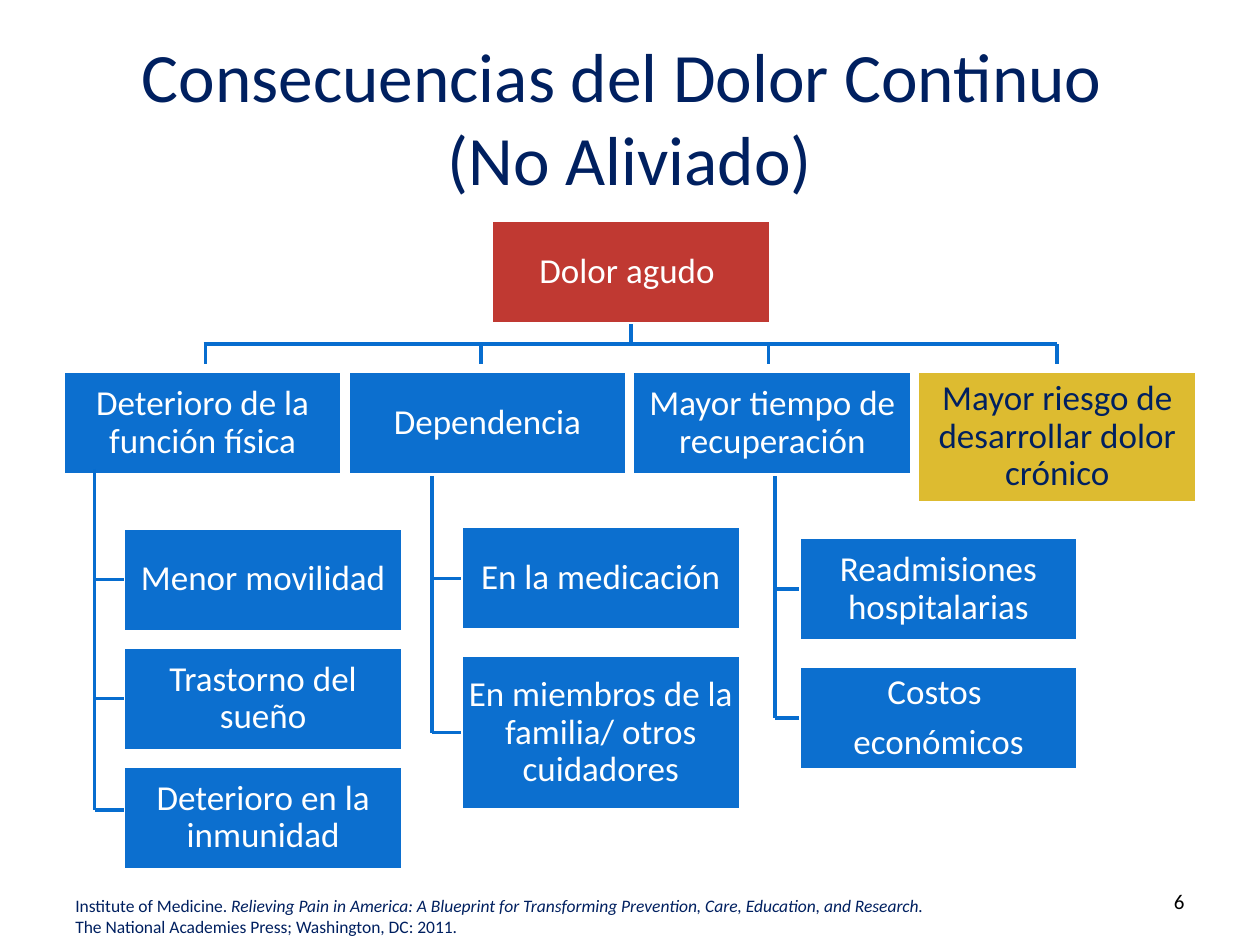
from lxml.etree import SubElement
from pptx import Presentation
from pptx.dml.color import RGBColor
from pptx.enum.shapes import MSO_CONNECTOR, MSO_SHAPE
from pptx.enum.text import MSO_ANCHOR, PP_ALIGN
from pptx.oxml.ns import qn
from pptx.util import Pt

COLORS = {
    "navy": "002060",
    "red": "C03932",
    "blue": "0C6FCF",
    "gold": "DDBB30",
    "line": "076DCF",
    "white": "FFFFFF",
    "black": "000000",
}
FONT = "Calibri"
BOX_WIDTH, BOX_HEIGHT = 159.6, 59.2
EFFECT_LEFT, EFFECT_TOP, EFFECT_STEP = 36, 212, 162.8
BAR_Y, DROP_END = 196.6, 208.2
BRANCH_TOLERANCE = 1

# Main effects: text, fill, text colour, height, x of the drop line
EFFECTS = [
    ("Deterioro de la función física", "blue", "white", BOX_HEIGHT, 117.4),
    ("Dependencia", "blue", "white", BOX_HEIGHT, 275),
    ("Mayor tiempo de recuperación", "blue", "white", BOX_HEIGHT, 439.2),
    ("Mayor riesgo de desarrollar dolor crónico", "gold", "navy", 75.2, 604),
]

# Details below an effect: trunk x, trunk top, box left,
# then text, top, height and branch y of each box
DETAILS = [
    (54, 268, 70.6, [
        ("Menor movilidad", 301.6, BOX_HEIGHT, 331.2),
        ("Trastorno del sueño", 369.6, BOX_HEIGHT, 399.2),
        ("Deterioro en la inmunidad", 437.6, BOX_HEIGHT, 463),
    ]),
    (247, 272.2, 263.5, [
        ("En la medicación", 301, BOX_HEIGHT, 330.6),
        ("En miembros de la familia/ otros cuidadores", 374.6, 88.2, 418.7),
    ]),
    (442.8, 272.2, 456.5, [
        ("Readmisiones hospitalarias", 307, BOX_HEIGHT, 336.6),
        ("Costos \neconómicos", 380.6, BOX_HEIGHT, 410.2),
    ]),
]


def rgb(name):
    return RGBColor.from_string(COLORS[name])


def apply_format(target, values):
    for name, value in values.items():
        setattr(target, name, value)


def add_run(paragraph, text, size, color, italic=False):
    # A vertical tab in the text becomes a line break within the paragraph
    first_line, *other_lines = text.split("\v")
    pieces = [first_line, *other_lines]
    for index, piece in enumerate(pieces):
        if index:
            paragraph.add_line_break()
        if piece:
            run = paragraph.add_run()
            run.text = piece
            apply_format(run.font, {"name": FONT, "size": Pt(size), "italic": italic})
            run.font.color.rgb = rgb(color)


def add_text(slide, bounds, runs, size, color, align, anchor):
    label = slide.shapes.add_textbox(*map(Pt, bounds))
    apply_format(label.text_frame, {"word_wrap": True, "vertical_anchor": anchor})
    paragraph = label.text_frame.paragraphs[0]
    paragraph.alignment = align
    for text, italic in runs:
        add_run(paragraph, text, size, color, italic)


def add_box(slide, left, top, height, text, fill="blue", color="white"):
    box = slide.shapes.add_shape(
        MSO_SHAPE.RECTANGLE, Pt(left), Pt(top), Pt(BOX_WIDTH), Pt(height))
    box.shadow.inherit = False
    box.fill.solid()
    box.fill.fore_color.rgb = rgb(fill)
    box.line.color.rgb = rgb("white")
    box.line.width = Pt(2)
    frame = box.text_frame
    margins = ("margin_left", "margin_top", "margin_right", "margin_bottom")
    apply_format(frame, dict.fromkeys(margins, Pt(1)))
    apply_format(frame, {"word_wrap": True, "vertical_anchor": MSO_ANCHOR.MIDDLE})
    for index, line in enumerate(text.split("\n")):
        paragraph = frame.add_paragraph() if index else frame.paragraphs[0]
        apply_format(paragraph, {
            "alignment": PP_ALIGN.CENTER, "line_spacing": 0.9, "space_after": Pt(7)})
        add_run(paragraph, line, 20, color)
    return box


def add_line(slide, x1, y1, x2, y2):
    line = slide.shapes.add_connector(
        MSO_CONNECTOR.STRAIGHT, Pt(x1), Pt(y1), Pt(x2), Pt(y2))
    line.line.color.rgb = rgb("line")
    line.line.width = Pt(2)
    SubElement(line.element.spPr, qn("a:effectLst"))
    return line


def add_effects(slide):
    root_left, root_top = 280.8, 126
    root = add_box(slide, root_left, root_top, BOX_HEIGHT, "Dolor agudo ", "red")
    for column, (text, fill, color, height, _) in enumerate(EFFECTS):
        left = EFFECT_LEFT + column * EFFECT_STEP
        add_box(slide, left, EFFECT_TOP, height, text, fill, color)

    # Bar from the root to the drop lines
    drops = [effect[-1] for effect in EFFECTS]
    add_line(slide, drops[0] - 1, BAR_Y, drops[-1], BAR_Y)
    root_x = root_left + BOX_WIDTH / 2
    stem = add_line(slide, root_x, root_top + BOX_HEIGHT, root_x, BAR_Y)
    stem.begin_connect(root, 2)
    for x in drops:
        add_line(slide, x, BAR_Y, x, DROP_END)


def add_details(slide, trunk_x, trunk_top, left, details):
    for text, top, height, branch_y in details:
        box = add_box(slide, left, top, height, text)
        branch = add_line(slide, trunk_x, branch_y, left, branch_y)
        if abs(top + height / 2 - branch_y) < BRANCH_TOLERANCE:
            branch.end_connect(box, 1)
    add_line(slide, trunk_x, trunk_top, trunk_x, details[-1][-1])


def main():
    presentation = Presentation()
    presentation.slide_width, presentation.slide_height = Pt(720), Pt(540)
    slide = presentation.slides.add_slide(presentation.slide_layouts[6])

    # Title
    add_text(slide, (36, 21.6, 648, 90),
             [("Consecuencias del Dolor Continuo \v(No Aliviado)", False)],
             39.6, "navy", PP_ALIGN.CENTER, MSO_ANCHOR.MIDDLE)

    # Tree of consequences
    add_effects(slide)
    for group in DETAILS:
        add_details(slide, *group)

    # Slide number and citation
    add_text(slide, (516, 500.4, 168, 28.8), [("6", False)],
             12, "black", PP_ALIGN.RIGHT, MSO_ANCHOR.MIDDLE)
    citation = [
        ("Institute of Medicine. ", False),
        ("Relieving Pain in America: A Blueprint for Transforming Prevention, "
         "Care, Education, and Research. \v", True),
        ("The National Academies Press; Washington, DC: 2011.", False),
    ]
    add_text(slide, (36, 507.6, 648, 31.5), citation,
             10, "navy", PP_ALIGN.LEFT, MSO_ANCHOR.TOP)

    presentation.save("out.pptx")


if __name__ == "__main__":
    main()
